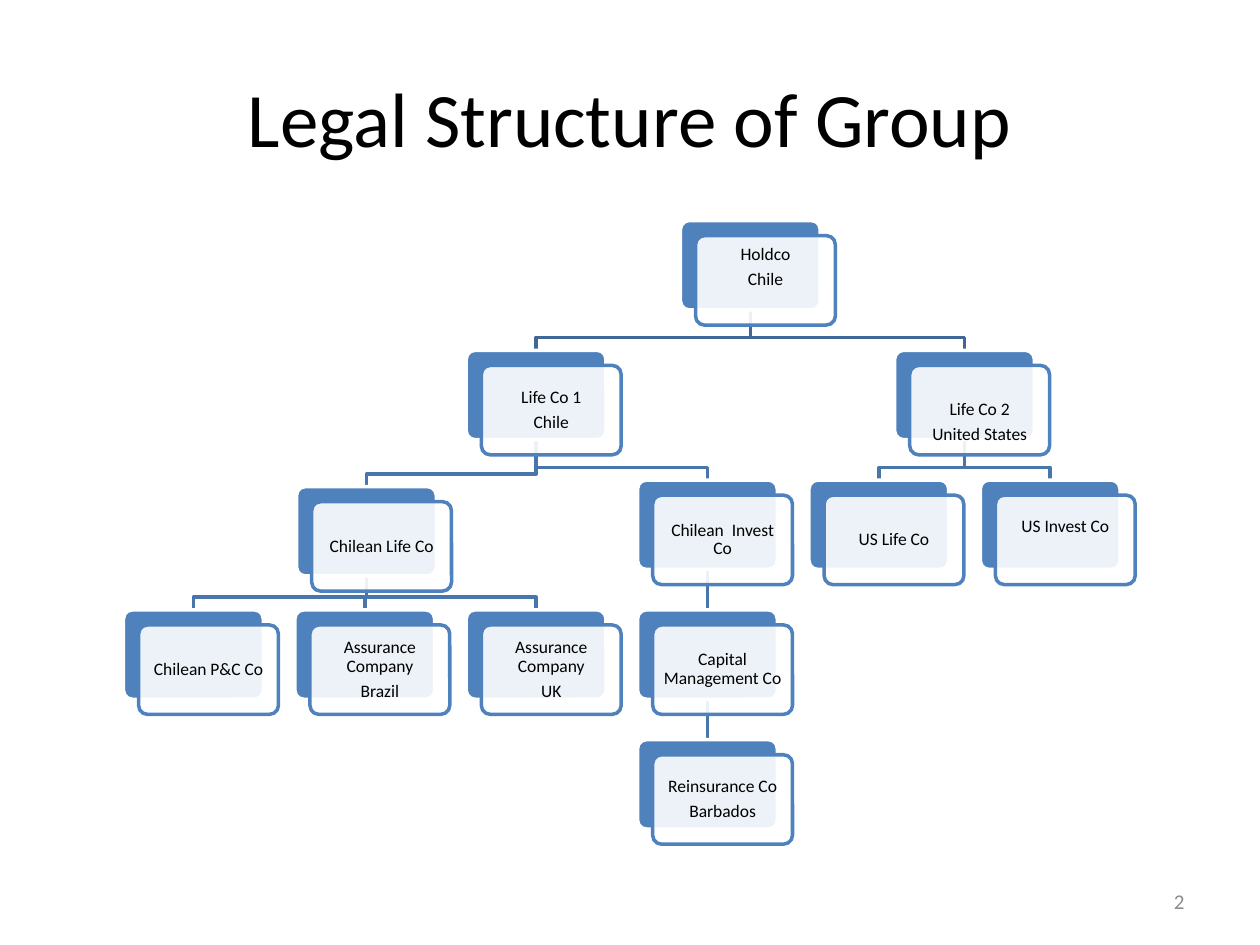
from dataclasses import dataclass

from lxml import etree
from pptx import Presentation
from pptx.dml.color import RGBColor
from pptx.enum import shapes, text
from pptx.oxml import ns
from pptx.util import Inches, Pt

TITLE = "Legal Structure of Group"
PAGE = "2"

# company: (lines, column, row, text shift in inches, parent)
COMPANIES = {
    "holdco": (["Holdco", "Chile"], 3.25, 0, -0.1, None),
    "life 1": (["Life Co 1", "Chile"], 2, 1, 0, "holdco"),
    "chilean life": (["Chilean Life Co"], 1.01, 2.05, 0, "life 1"),
    "p&c": (["Chilean P&C Co"], 0, 3, 0, "chilean life"),
    "brazil": (["Assurance Company", "Brazil"], 1, 3, 0, "chilean life"),
    "uk": (["Assurance Company", "UK"], 2, 3, 0, "chilean life"),
    "chilean invest": (["Chilean  Invest Co"], 3, 2, 0, "life 1"),
    "capital": (["Capital Management Co"], 3, 3, 0, "chilean invest"),
    "reinsurance": (["Reinsurance Co", "Barbados"], 3, 4, 0, "capital"),
    "life 2": (["Life Co 2", "United States"], 4.5, 1, 0.1, "holdco"),
    "us life": (["US Life Co"], 4, 2, 0, "life 2"),
    "us invest": (["US Invest Co"], 5, 2, -0.1, "life 2"),
}

LEFT, TOP, COL_STEP, ROW_STEP = 0.98, 1.75, 1.36, 1.03
CARD_W, CARD_H, OFFSET, BEND, INSET = 1.11, 0.71, 0.12, 0.1, 0.04


@dataclass(frozen=True)
class Theme:
    font: str = "Calibri"
    ink: str = "000000"
    page_ink: str = "8C8C8C"
    accent: str = "4F81BD"
    paper: str = "FFFFFF"
    top_link: str = "3F6797"
    link: str = "4875AC"
    title_size: int = 44
    card_size: int = 10
    page_size: int = 12
    stroke: int = 2


THEME = Theme()


def rgb(value):
    return RGBColor.from_string(value)


def corner(company):
    _, column, row, _, _ = COMPANIES[company]
    return LEFT + column * COL_STEP, TOP + row * ROW_STEP


def write(frame, lines, size, ink, align):
    frame.word_wrap = True
    frame.vertical_anchor = text.MSO_ANCHOR.MIDDLE
    for index, line in enumerate(lines):
        paragraph = frame.add_paragraph() if index else frame.paragraphs[0]
        paragraph.text = line
        paragraph.alignment = align
        paragraph.font.name = THEME.font
        paragraph.font.size = Pt(size)
        paragraph.font.color.rgb = rgb(ink)


def add_label(slide, box, line, size, ink, align):
    label = slide.shapes.add_textbox(*map(Inches, box))
    write(label.text_frame, [line], size, ink, align)


def add_link(slide, parent, child):
    (parent_x, parent_y), (child_x, child_y) = corner(parent), corner(child)
    start_x, end_x = parent_x + CARD_W / 2, child_x + CARD_W / 2
    start_y, bend_y = parent_y + CARD_H, child_y - BEND
    if start_x == end_x:
        link = slide.shapes.add_connector(
            shapes.MSO_CONNECTOR.STRAIGHT,
            *map(Inches, (start_x, start_y, end_x, child_y)))
        etree.SubElement(link._element.spPr, ns.qn("a:effectLst"))
    else:
        route = slide.shapes.build_freeform(Inches(start_x), Inches(start_y))
        turns = [(start_x, bend_y), (end_x, bend_y), (end_x, child_y)]
        route.add_line_segments(
            [(Inches(x), Inches(y)) for x, y in turns], close=False)
        link = route.convert_to_shape()
        link.fill.background()
        link.shadow.inherit = False
    is_top = COMPANIES[parent][-1] is None
    link.line.color.rgb = rgb(THEME.top_link if is_top else THEME.link)
    link.line.width = Pt(THEME.stroke)
    return link


def add_panel(slide, x, y, fill, line):
    panel = slide.shapes.add_shape(
        shapes.MSO_SHAPE.ROUNDED_RECTANGLE,
        *map(Inches, (x, y, CARD_W, CARD_H)))
    panel.adjustments[0] = 0.1
    panel.shadow.inherit = False
    panel.fill.solid()
    panel.fill.fore_color.rgb = rgb(fill)
    panel.line.color.rgb = rgb(line)
    panel.line.width = Pt(THEME.stroke)
    return panel


def add_company(slide, company):
    lines, _, _, shift, _ = COMPANIES[company]
    x, y = corner(company)
    back = add_panel(slide, x, y, THEME.accent, THEME.paper)
    card = add_panel(slide, x + OFFSET, y + OFFSET, THEME.paper, THEME.accent)
    color = card._element.spPr.find(".//" + ns.qn("a:srgbClr"))
    etree.SubElement(color, ns.qn("a:alpha"), val="90000")
    frame = card.text_frame
    frame.margin_left = frame.margin_right = Inches(INSET)
    frame.margin_top = Inches(INSET + 2 * max(shift, 0))
    frame.margin_bottom = Inches(INSET + 2 * max(-shift, 0))
    write(frame, lines, THEME.card_size, THEME.ink, text.PP_ALIGN.CENTER)
    for paragraph in frame.paragraphs:
        paragraph.line_spacing = 0.9
        paragraph.space_after = Pt(3.5)
    return back


def main():
    """Build the group structure slide."""
    deck = Presentation()
    deck.slide_width, deck.slide_height = Inches(10), Inches(7.5)
    slide = deck.slides.add_slide(deck.slide_layouts[6])
    add_label(slide, (0.5, 0.3, 9, 1.25), TITLE,
              THEME.title_size, THEME.ink, text.PP_ALIGN.CENTER)
    parents = {name: entry[-1] for name, entry in COMPANIES.items() if entry[-1]}
    links = {child: add_link(slide, parent, child)
             for child, parent in parents.items()}
    backs = {company: add_company(slide, company) for company in COMPANIES}
    for child, link in links.items():
        if link.shape_type == shapes.MSO_SHAPE_TYPE.LINE:
            link.begin_connect(backs[parents[child]], 2)
            link.end_connect(backs[child], 0)
    add_label(slide, (7.17, 6.95, 2.33, 0.4), PAGE,
              THEME.page_size, THEME.page_ink, text.PP_ALIGN.RIGHT)
    deck.save("out.pptx")


if __name__ == "__main__":
    main()
